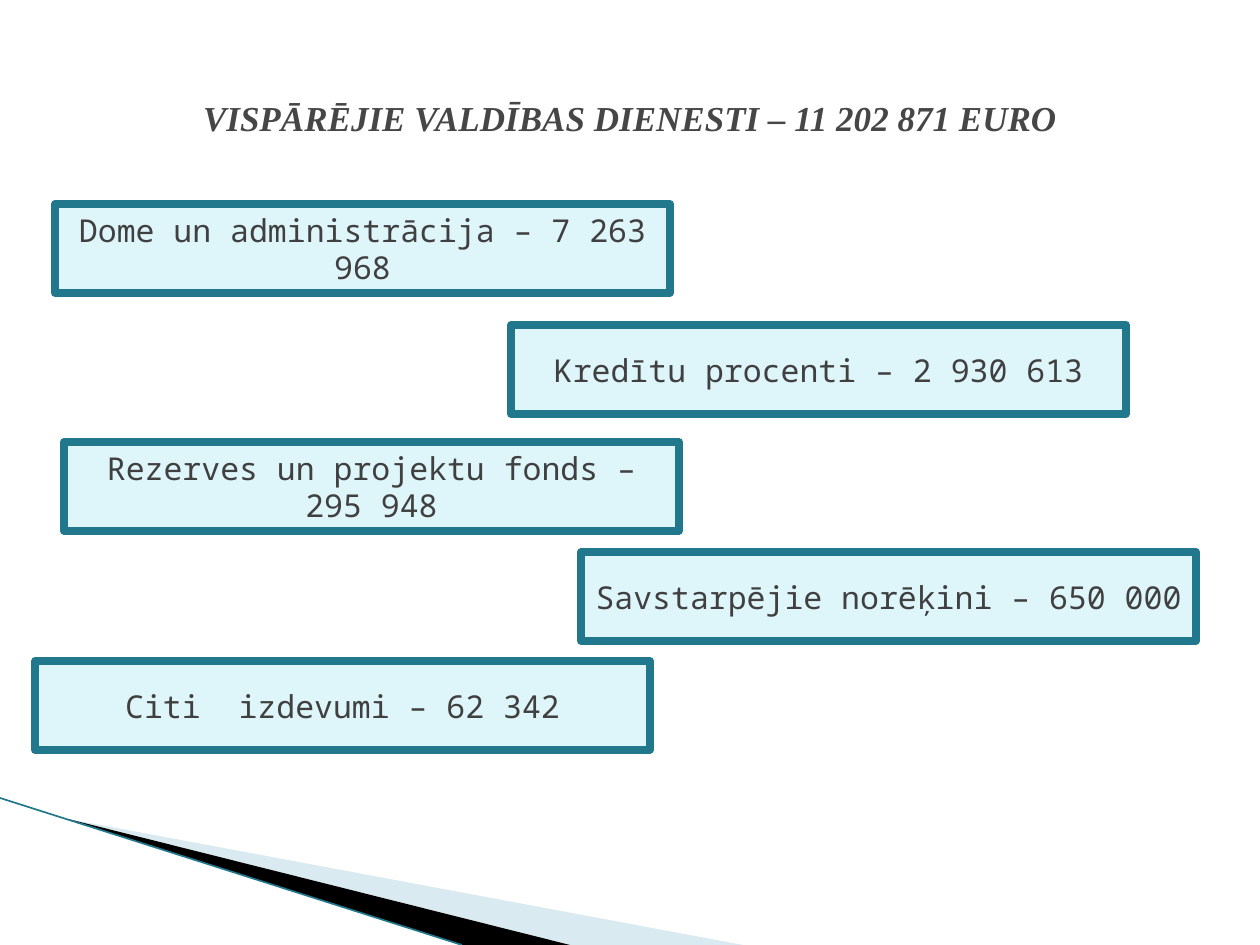
from lxml.etree import SubElement
from pptx import Presentation
from pptx.dml.color import RGBColor
from pptx.enum.shapes import MSO_CONNECTOR, MSO_SHAPE
from pptx.enum.text import MSO_ANCHOR, PP_ALIGN
from pptx.oxml.ns import qn
from pptx.util import Pt

EMU_PER_PX = 914400 / 126
SLIDE_SIZE = (1260, 945)
COLORS = {
    "title": "464646",
    "item_text": "404040",
    "item_fill": "DEF5FA",
    "teal": "21788D",
    "pale_blue": "A0CBDC",
    "black": "000000",
}
ITEM_SIZE = (615, 89)
EXPENSES = [
    ((55, 204), "Dome un administrācija – 7 263 968"),
    ((511, 325), "Kredītu procenti – 2 930 613"),
    ((64, 442), "Rezerves un projektu fonds – 295 948"),
    ((581, 552), "Savstarpējie norēķini – 650 000"),
    ((35, 661), "Citi  izdevumi – 62 342"),
]


def px(*lengths):
    return [round(length * EMU_PER_PX) for length in lengths]


def color(name):
    return RGBColor.from_string(COLORS[name])


def write_centred(frame, text, font_name, size, color_name, bold=False, italic=False):
    frame.word_wrap = True
    frame.vertical_anchor = MSO_ANCHOR.MIDDLE
    paragraph = frame.paragraphs[0]
    paragraph.alignment = PP_ALIGN.CENTER
    run = paragraph.add_run()
    run.text = text
    run.font.name = font_name
    run.font.size = Pt(size)
    run.font.bold = bold
    run.font.italic = italic
    run.font.color.rgb = color(color_name)


def add_wedge(slide, left, top, points, color_name, alpha=None):
    """Draw a borderless polygon from points relative to left and top."""
    corners = [(left + x, top + y) for x, y in points]
    builder = slide.shapes.build_freeform(*corners[0], scale=EMU_PER_PX)
    builder.add_line_segments(corners[1:], close=True)
    wedge = builder.convert_to_shape()
    wedge.shadow.inherit = False
    wedge.line.fill.background()
    wedge.fill.solid()
    wedge.fill.fore_color.rgb = color(color_name)
    if alpha is not None:
        fill_color = wedge.fill._xPr.find(qn("a:solidFill"))[0]
        SubElement(fill_color, qn("a:alpha"), val=str(alpha * 1000))


def add_corner_decoration(slide, left, top, width, height):
    apex = (68, 21)
    add_wedge(slide, left, top, [apex, (width, height), (570, height)], "pale_blue", alpha=40)
    add_wedge(slide, left, top, [apex, (570, height), (462, height)], "black")
    edge = slide.shapes.add_connector(
        MSO_CONNECTOR.STRAIGHT, *px(left, top, left + 462, top + height))
    edge.line.color.rgb = color("teal")
    edge.line.width = Pt(0.95)
    SubElement(edge._element.spPr, qn("a:effectLst"))


def add_heading(slide, left, top, width, height):
    heading = slide.shapes.title
    heading.left, heading.top, heading.width, heading.height = px(left, top, width, height)
    write_centred(heading.text_frame, "VISPĀRĒJIE VALDĪBAS DIENESTI – 11 202 871 EURO",
                  "Times New Roman", 20, "title", bold=True, italic=True)


def add_expense(slide, left, top, width, height, text):
    expense = slide.shapes.add_shape(MSO_SHAPE.RECTANGLE, *px(left, top, width, height))
    expense.shadow.inherit = False
    expense.fill.solid()
    expense.fill.fore_color.rgb = color("item_fill")
    expense.line.color.rgb = color("teal")
    expense.line.width = Pt(4.33)
    write_centred(expense.text_frame, text, "Noto Sans Mono", 18, "item_text")


def main():
    prs = Presentation()
    prs.slide_width, prs.slide_height = px(*SLIDE_SIZE)
    slide = prs.slides.add_slide(prs.slide_layouts[5])
    add_corner_decoration(slide, 0, 798, 743, 147)
    add_heading(slide, 63, 38, 1134, 158)
    for position, text in EXPENSES:
        add_expense(slide, *position, *ITEM_SIZE, text)
    prs.save("out.pptx")


if __name__ == "__main__":
    main()
